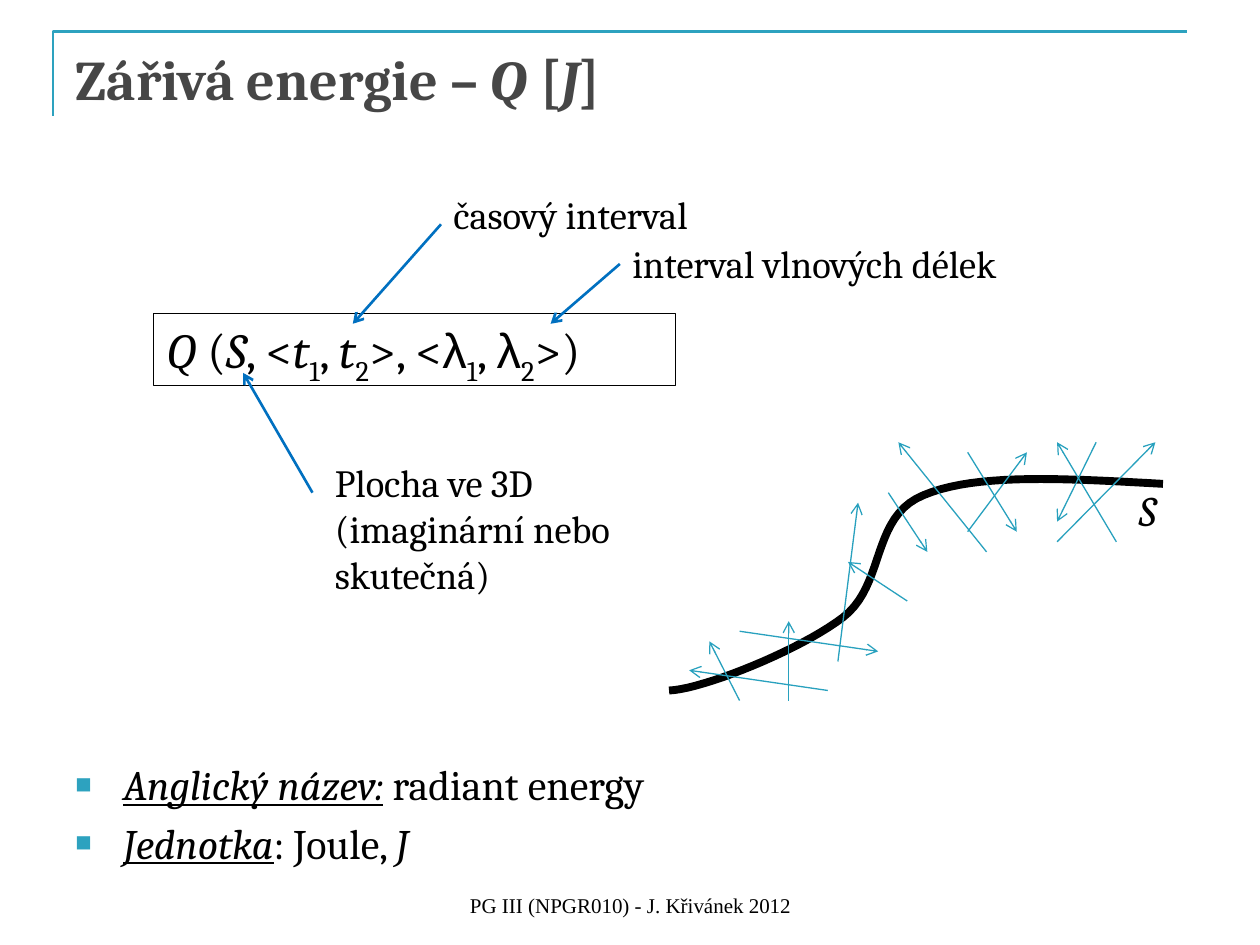
from lxml import etree
from pptx import Presentation
from pptx.dml.color import RGBColor
from pptx.enum import shapes, text
from pptx.oxml import ns
from pptx.util import Inches, Pt

TEAL = RGBColor(0x2D, 0xA2, 0xBF)
RAY = RGBColor(0x28, 0xA1, 0xBE)
BLUE = RGBColor(0x00, 0x70, 0xC0)
GRAY = RGBColor(0x46, 0x46, 0x46)
BLACK = RGBColor(0, 0, 0)

STYLES = {
    "": {},
    "i": {"italic": True},
    "iu": {"italic": True, "underline": True},
    "sub": {},
    "greek": {"name": "Arial"},
}
TITLE = [("Zářivá energie – ", ""), ("Q ", "i"), ("[", ""), ("J", "i"), ("]", "")]
FORMULA = [
    ("Q ", "i"), ("(", ""), ("S", "i"), (", <", ""),
    ("t", "i"), ("1", "sub"), (", ", ""), ("t", "i"), ("2", "sub"), (">, <", ""),
    ("λ", "greek"), ("1", "sub"), (", ", ""), ("λ", "greek"), ("2", "sub"), (">)", ""),
]
FACTS = [
    [("Anglický název:", "iu"), (" radiant energy", "")],
    [("Jednotka", "iu"), (": Joule, ", ""), ("J", "i")],
]
SURFACE_START = (9.23, 3.84)
SURFACE_CURVES = [
    [(8.49, 3.8), (7.75, 3.75), (7.33, 3.93)],
    [(6.91, 4.1), (7.03, 4.64), (6.69, 4.9)],
    [(6.35, 5.16), (5.58, 5.47), (5.31, 5.48)],
]
RAYS = [
    ((8.7, 3.51), (8.39, 4.14)), ((7.68, 3.59), (8.07, 4.22)),
    ((7.68, 4.22), (8.15, 3.59)), ((7.05, 3.91), (7.36, 4.38)),
    ((7.2, 4.77), (6.73, 4.46)), ((6.65, 5.25), (6.81, 3.99)),
    ((5.87, 5.01), (6.97, 5.17)), ((5.87, 5.56), (5.63, 5.09)),
    ((7.83, 4.38), (7.13, 3.51)), ((8.86, 4.3), (8.39, 3.51)),
    ((8.39, 4.3), (9.17, 3.51)), ((6.26, 5.56), (6.26, 4.93)),
    ((6.57, 5.48), (5.47, 5.32)),
]


def write_runs(paragraph, pieces, size, color=BLACK, **base):
    for words, style in pieces:
        run = paragraph.add_run()
        run.text = words
        formats = {"name": "Cambria", "size": Pt(size), **base, **STYLES[style]}
        for attribute, value in formats.items():
            setattr(run.font, attribute, value)
        run.font.color.rgb = color
        if style == "sub":
            run.font._element.set("baseline", "-25000")


def write_lines(shape, lines, size, **base):
    frame = shape.text_frame
    frame.word_wrap = True
    for index, pieces in enumerate(lines):
        paragraph = frame.add_paragraph() if index else frame.paragraphs[0]
        paragraph.alignment = text.PP_ALIGN.LEFT
        write_runs(paragraph, pieces, size, **base)


def add_label(slide, box, lines, size, **base):
    label = slide.shapes.add_textbox(*map(Inches, box))
    write_lines(label, lines, size, **base)
    return label


def add_arrow(slide, start, end, color, width):
    arrow = slide.shapes.add_connector(
        shapes.MSO_CONNECTOR.STRAIGHT, *map(Inches, start + end))
    arrow.line.color.rgb = color
    arrow.line.width = Pt(width)
    etree.SubElement(arrow.line._get_or_add_ln(), ns.qn("a:tailEnd"), type="arrow")
    etree.SubElement(arrow._element.spPr, ns.qn("a:effectLst"))
    return arrow


def add_outline(slide, points, color, width):
    builder = slide.shapes.build_freeform(*map(Inches, points[0]))
    builder.add_line_segments(
        [(Inches(x), Inches(y)) for x, y in points[1:]], close=False)
    outline = builder.convert_to_shape()
    outline.shadow.inherit = False
    outline.fill.background()
    outline.line.color.rgb = color
    outline.line.width = Pt(width)


def curve_points(start, curves, steps=20):
    points = [start]
    for first, second, end in curves:
        anchors = (points[-1], first, second, end)
        for step in range(1, steps + 1):
            t = step / steps
            weights = ((1 - t) ** 3, 3 * t * (1 - t) ** 2, 3 * t * t * (1 - t), t ** 3)
            points.append(tuple(
                sum(w * anchor[axis] for w, anchor in zip(weights, anchors))
                for axis in (0, 1)))
    return points


def place_title(slide):
    title = slide.shapes.title
    box = {"left": 0.5, "top": 0.3, "width": 9, "height": 1.25}
    for attribute, value in box.items():
        setattr(title, attribute, Inches(value))
    title.text_frame.vertical_anchor = text.MSO_ANCHOR.TOP
    write_lines(title, [TITLE], 32, color=GRAY, bold=True)


def add_formula(slide):
    formula = slide.shapes.add_shape(
        shapes.MSO_SHAPE.RECTANGLE, *map(Inches, (1.22, 2.49, 4.14, 0.57)))
    formula.shadow.inherit = False
    formula.fill.background()
    formula.line.color.rgb = BLACK
    formula.line.width = Pt(0.75)
    formula.text_frame.vertical_anchor = text.MSO_ANCHOR.TOP
    write_lines(formula, [FORMULA], 28)


def add_facts(slide):
    facts = add_label(slide, (0.5, 5.97, 9, 1.03), FACTS, 24)
    for paragraph in facts.text_frame.paragraphs:
        paragraph.space_after = Pt(4.8)
        properties = paragraph._p.get_or_add_pPr()
        properties.set("marL", str(Inches(0.38)))
        properties.set("indent", str(Inches(-0.38)))
        bullet_color = etree.SubElement(properties, ns.qn("a:buClr"))
        etree.SubElement(bullet_color, ns.qn("a:srgbClr"), val=str(TEAL))
        etree.SubElement(properties, ns.qn("a:buSzPct"), val="65000")
        etree.SubElement(properties, ns.qn("a:buFont"), typeface="Arial")
        etree.SubElement(properties, ns.qn("a:buChar"), char="■")


def add_footer(slide):
    footer = add_label(slide, (3.42, 6.83, 3.17, 0.5),
                       [[("PG III (NPGR010) - J. Křivánek 2012", "")]],
                       12, name="Times New Roman")
    footer.text_frame.vertical_anchor = text.MSO_ANCHOR.BOTTOM
    footer.text_frame.paragraphs[0].alignment = text.PP_ALIGN.CENTER


def main():
    deck = Presentation()
    deck.slide_width, deck.slide_height = Inches(10), Inches(7.5)
    slide = deck.slides.add_slide(deck.slide_layouts[5])

    add_outline(slide, [(0.42, 0.92), (0.42, 0.25), (9.42, 0.25)], TEAL, 1.5)
    place_title(slide)
    add_facts(slide)
    add_outline(slide, curve_points(SURFACE_START, SURFACE_CURVES), BLACK, 4.5)
    add_formula(slide)

    add_label(slide, (3.5, 1.47, 2.23, 0.47), [[("časový interval", "")]], 22)
    add_arrow(slide, (3.5, 1.78), (2.8, 2.57), BLUE, 1.5)
    surface_note = ["Plocha ve 3D", "(imaginární nebo", "skutečná)"]
    add_label(slide, (2.56, 3.59, 2.64, 1.21),
              [[(line, "")] for line in surface_note], 22)
    add_arrow(slide, (2.48, 3.91), (1.93, 2.96), BLUE, 1.5)
    add_label(slide, (8.94, 3.8, 0.39, 0.5), [[("S", "i")]], 24)
    for start, end in RAYS:
        add_arrow(slide, start, end, RAY, 0.75)
    wavelengths = add_label(slide, (4.92, 1.86, 3.34, 0.47),
                            [[("interval vlnových délek", "")]], 22)
    wavelength_arrow = add_arrow(slide, (4.92, 2.1), (4.37, 2.57), BLUE, 1.5)
    wavelength_arrow.begin_connect(wavelengths, 1)
    add_footer(slide)

    deck.save("out.pptx")


if __name__ == "__main__":
    main()
